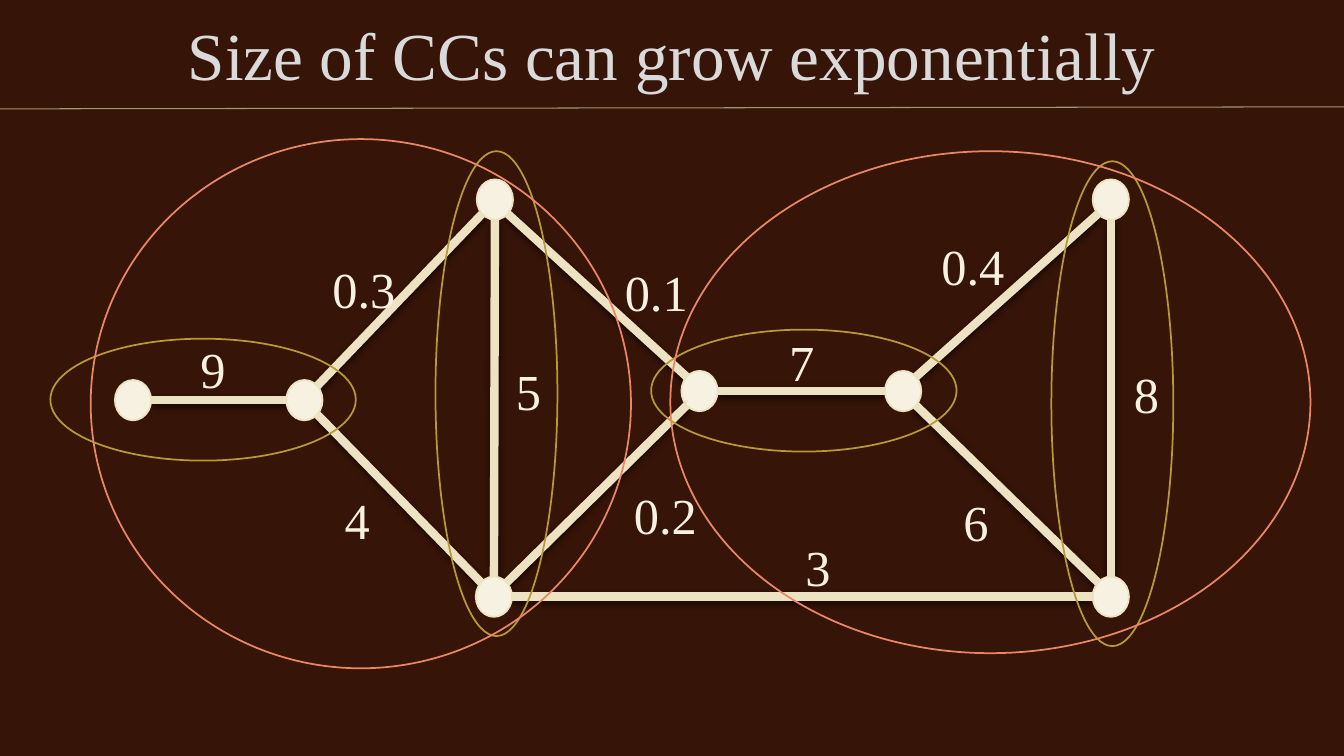
import typing
import lxml.etree
import pptx
import pptx.dml.color
import pptx.enum.shapes
import pptx.enum.text
import pptx.oxml.ns
import pptx.util

CELL = pptx.util.Inches(0.1)
COLS, ROWS = 133.33, 75
FONT = "Times New Roman"
HUES = {
    "back": "361408", "title": "DADADA", "text": "F6F1E1", "edge": "EDE3C3",
    "rule": "A59675", "gold": "B79935", "coral": "E98764", "shade": "000000",
}
WIDE, TALL = 3.6, 4.0
DIAG = 0.5 ** 0.5


class Node(typing.NamedTuple):
    x: float
    y: float


class Edge(typing.NamedTuple):
    start: str
    end: str


class Label(typing.NamedTuple):
    text: str
    x: float
    y: float
    w: float = 6.9


class Ring(typing.NamedTuple):
    x: float
    y: float
    w: float
    h: float
    hue: str


NODES = {
    "a": Node(13.2, 39.7), "b": Node(30.2, 39.7),
    "c": Node(49.1, 19.8), "d": Node(49, 59.2),
    "e": Node(69.4, 38.8), "f": Node(89.6, 38.8),
    "g": Node(110.2, 19.8), "h": Node(110.2, 59.2),
}
EDGES = [Edge(*pair) for pair in
         ("ab", "bc", "bd", "cd", "ce", "de", "ef", "fg", "fh", "gh", "dh")]
LABELS = [
    Label("9", 18.9, 33.1), Label("0.3", 32, 25.1, 9.6),
    Label("4", 33.2, 48, 10.2), Label("5", 50.2, 35.2),
    Label("0.1", 61, 25.4, 9.6), Label("0.2", 61.9, 47.5, 9.1),
    Label("7", 77.3, 32.4), Label("0.4", 92.4, 22.8, 8.6),
    Label("6", 94.6, 48.2), Label("8", 111.5, 35.5), Label("3", 78.9, 52.7),
]
RINGS = [
    Ring(104.3, 16, 12.1, 48.1, "gold"), Ring(64.6, 32.7, 30.3, 12.1, "gold"),
    Ring(43.2, 15, 12.1, 48.1, "gold"), Ring(5, 33.6, 30.3, 12.1, "gold"),
    Ring(66.5, 15, 63.5, 49.8, "coral"), Ring(9, 13.8, 53.6, 52.5, "coral"),
]


def span(*cells: float) -> list[int]:
    return [round(cell * CELL) for cell in cells]


def tint(hue: str) -> pptx.dml.color.RGBColor:
    return pptx.dml.color.RGBColor.from_string(HUES[hue])


def shade(host, blur: float = 0, drop: float = 0) -> None:
    name = pptx.oxml.ns.qn
    sub = lxml.etree.SubElement
    box = sub(host, name("a:effectLst"))
    if drop:
        cast = sub(box, name("a:outerShdw"), dir="5400000", rotWithShape="0",
                   blurRad=str(pptx.util.Pt(blur)), dist=str(pptx.util.Pt(drop)))
        ink = sub(cast, name("a:srgbClr"), val=HUES["shade"])
        sub(ink, name("a:alpha"), val="60000")


def write(slide, text: str, x: float, y: float, w: float, h: float, *,
          size: int = 36, hue: str = "text", head: bool = False) -> None:
    box = slide.shapes.add_textbox(*span(x, y, w, h))
    frame = box.text_frame
    frame.word_wrap = True
    run = frame.paragraphs[0].add_run()
    run.text = text
    run.font.size = pptx.util.Pt(size)
    run.font.color.rgb = tint(hue)
    if head:
        frame.vertical_anchor = pptx.enum.text.MSO_ANCHOR.MIDDLE
        frame.paragraphs[0].alignment = pptx.enum.text.PP_ALIGN.CENTER
        shade(run.font._element, 4, 2)
    else:
        frame.auto_size = pptx.enum.text.MSO_AUTO_SIZE.SHAPE_TO_FIT_TEXT
    run.font.name = FONT


def stroke(slide, x: float, y: float, to_x: float, to_y: float,
           hue: str, width: float, drop: float = 0) -> None:
    kind = pptx.enum.shapes.MSO_CONNECTOR.STRAIGHT
    line = slide.shapes.add_connector(kind, *span(x, y, to_x, to_y))
    line.line.color.rgb = tint(hue)
    line.line.width = pptx.util.Pt(width)
    shade(line._element.spPr, 5, drop)


def oval(slide, ring: Ring, fill: str = "") -> None:
    kind = pptx.enum.shapes.MSO_SHAPE.OVAL
    shape = slide.shapes.add_shape(kind, *span(ring.x, ring.y, ring.w, ring.h))
    shape.shadow.inherit = False
    shape.line.color.rgb = tint(ring.hue)
    shape.line.width = pptx.util.Pt(1.25)
    if fill:
        shape.fill.solid()
        shape.fill.fore_color.rgb = tint(fill)
    else:
        shape.fill.background()


def sign(gap: float) -> int:
    return 0 if abs(gap) < 1 else 1 if gap > 0 else -1


def link(slide, edge: Edge) -> None:
    one, two = NODES[edge.start], NODES[edge.end]
    right, down = sign(two.x - one.x), sign(two.y - one.y)
    reach = DIAG if right and down else 1
    dx, dy = right * reach * WIDE / 2, down * reach * TALL / 2
    stroke(slide, one.x + dx, one.y + dy, two.x - dx, two.y - dy, "edge", 6, 2)


def main() -> None:
    deck = pptx.Presentation()
    deck.slide_width, deck.slide_height = span(COLS, ROWS)
    slide = deck.slides.add_slide(deck.slide_layouts[6])
    slide.background.fill.solid()
    slide.background.fill.fore_color.rgb = tint("back")
    stroke(slide, 0, 10.8, COLS, 10.6, "rule", 0.75)
    write(slide, "Size of CCs can grow exponentially", 0, 0, COLS, 10.6,
          size=48, hue="title", head=True)
    for edge in EDGES:
        link(slide, edge)
    for label in LABELS:
        write(slide, label.text, label.x, label.y, label.w, 7.1)
    for node in NODES.values():
        oval(slide, Ring(node.x - WIDE / 2, node.y - TALL / 2, WIDE, TALL, "edge"), "text")
    for ring in RINGS:
        oval(slide, ring)
    deck.save("out.pptx")


if __name__ == "__main__":
    main()
